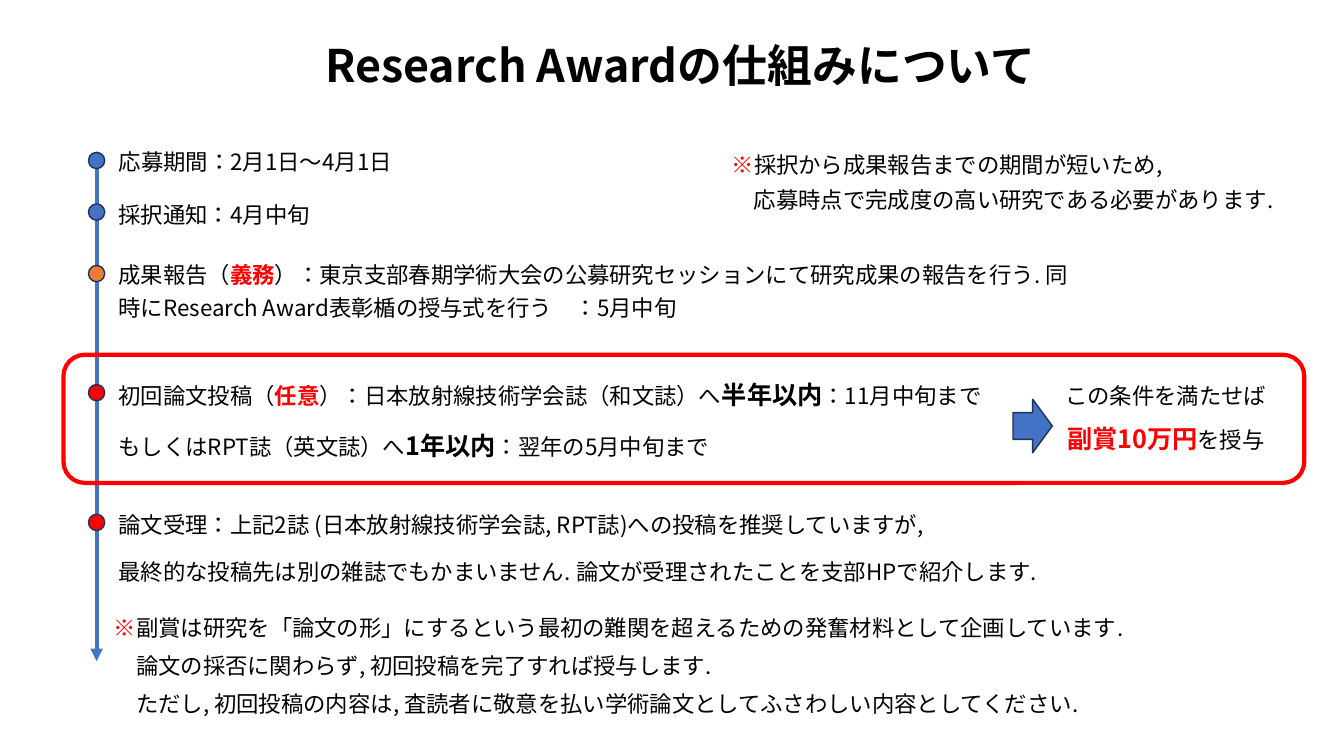
from lxml import etree
from pptx import Presentation
from pptx.dml.color import RGBColor
from pptx.enum.shapes import MSO_CONNECTOR, MSO_SHAPE
from pptx.enum.text import MSO_ANCHOR, MSO_AUTO_SIZE, PP_ALIGN
from pptx.oxml.ns import qn
from pptx.util import Cm, Pt

LEFT, CENTER = PP_ALIGN.LEFT, PP_ALIGN.CENTER
MIDDLE = MSO_ANCHOR.MIDDLE
SHRINK, FIXED = MSO_AUTO_SIZE.TEXT_TO_FIT_SHAPE, MSO_AUTO_SIZE.NONE
STRAIGHT = MSO_CONNECTOR.STRAIGHT
OVAL, ARROW, ROUNDED = MSO_SHAPE.OVAL, MSO_SHAPE.RIGHT_ARROW, MSO_SHAPE.ROUNDED_RECTANGLE

FONT = "Noto Sans CJK JP"
COLORS = {"text": "000000", "blue": "4472C4", "edge": "1E3256",
          "orange": "ED7D31", "red": "FF0000"}
DOT = 0.41
HANG = 0.56
STAGE_SPACING = 1.23


def rgb(name):
    return RGBColor.from_string(COLORS[name])


def place(shape, box):
    shape.left, shape.top, shape.width, shape.height = map(Cm, box)


def write(holder, box, paragraphs, spacing, size=16, align=LEFT, bold=False,
          hang=False, fit=FIXED):
    place(holder, box)
    frame = holder.text_frame
    frame.word_wrap = True
    frame.auto_size = fit
    frame.vertical_anchor = MIDDLE
    for index, pieces in enumerate(paragraphs):
        paragraph = frame.add_paragraph() if index else frame.paragraphs[0]
        paragraph.alignment = align
        paragraph.line_spacing = spacing
        paragraph.space_before = Pt(10 if index else 0)
        properties = paragraph._p.get_or_add_pPr()
        if hang:
            properties.set("marL", str(Cm(HANG)))
            properties.set("indent", str(0 if index else -Cm(HANG)))
        paragraph.font.name = FONT
        paragraph.font.size = Pt(size)
        paragraph.font.bold = bold
        paragraph.font.color.rgb = rgb("text")
        for words, style in pieces:
            run = paragraph.add_run()
            run.text = words
            run_properties = run._r.get_or_add_rPr()
            run_properties.set("lang", "ja-JP")
            etree.SubElement(run_properties, qn("a:ea")).set("typeface", FONT)
            if "bold" in style:
                run.font.bold = True
            if "red" in style:
                run.font.color.rgb = rgb("red")
            if "large" in style:
                run.font.size = Pt(18)


def add_text(slide, box, paragraphs, spacing, **options):
    write(slide.shapes.add_textbox(0, 0, 0, 0), box, paragraphs, spacing, **options)


def add_figure(slide, kind, box, fill, edge, width):
    figure = slide.shapes.add_shape(kind, *map(Cm, box))
    figure.shadow.inherit = False
    if fill:
        figure.fill.solid()
        figure.fill.fore_color.rgb = rgb(fill)
    else:
        figure.fill.background()
    figure.line.color.rgb = rgb(edge)
    figure.line.width = Pt(width)


def add_timeline(slide, box, milestones):
    left, top, width, height = box
    axis_x = left + width / 2
    axis = slide.shapes.add_connector(
        STRAIGHT, Cm(axis_x), Cm(top), Cm(axis_x), Cm(top + height))
    axis.line.color.rgb = rgb("blue")
    axis.line.width = Pt(3)
    etree.SubElement(axis.line._get_or_add_ln(), qn("a:tailEnd")).set("type", "triangle")
    etree.SubElement(axis._element.spPr, qn("a:effectLst"))
    for offset, color in milestones:
        add_figure(slide, OVAL, (left, top + offset, DOT, DOT), color, "edge", 1)


def add_stages(slide, box, period):
    left, top, width, _ = box
    write(period, (left, top, 8.15, 1.14),
          [[("応募期間：2月1日〜4月1日", "")]], 0.77)
    add_text(slide, (left, top + 1.32, 8.15, 1.14),
             [[("採択通知：4月中旬", "")]], 0.9)
    add_text(slide, (left, top + 2.69, 24.46, 2.03), [[
        ("成果報告（", ""), ("義務", "red bold"),
        ("）：東京支部春期学術大会の公募研究セッションにて研究成果の報告を行う. "
         "同時にResearch Award表彰楯の授与式を行う　：5月中旬", "")]], STAGE_SPACING)
    add_text(slide, (left, top + 5.92, 22.63, 2.03), [
        [("初回論文投稿（", ""), ("任意", "red bold"),
         ("）：日本放射線技術学会誌（和文誌）へ", ""),
         ("半年以内", "large bold"), ("：11月中旬まで", "")],
        [("もしくはRPT誌（英文誌）へ", ""), ("1年以内", "large bold"),
         ("：翌年の5月中旬まで", "")]], STAGE_SPACING)
    add_text(slide, (left, top + 9.17, width, 2.03), [
        [("論文受理：上記2誌 (日本放射線技術学会誌, RPT誌)への投稿を推奨していますが,", "")],
        [("最終的な投稿先は別の雑誌でもかまいません. "
          "論文が受理されたことを支部HPで紹介します.", "")]], STAGE_SPACING)


def add_prize(slide, box):
    left, top, _, _ = box
    add_figure(slide, ARROW, (left + 23.93, top + 1.12, 0.99, 1.35), "blue", "edge", 1)
    add_text(slide, (left + 24.44, top + 0.58, 6.68, 2.03), [
        [("この条件を満たせば", "")],
        [("副賞10万円", "large red bold"), ("を授与", "")]], 1.0, align=CENTER)
    add_figure(slide, ROUNDED, box, None, "red", 3)


def add_note(slide, box, lines, spacing):
    first, *others = lines
    paragraphs = [[("※", "red"), (first, "")]] + [[(line, "")] for line in others]
    add_text(slide, box, paragraphs, spacing, hang=True, fit=SHRINK)


def main():
    deck = Presentation()
    deck.slide_width, deck.slide_height = Cm(33.87), Cm(19.05)
    slide = deck.slides.add_slide(deck.slide_layouts[0])
    title, period = slide.placeholders
    write(title, (0.43, 0.56, 33.43, 2.29),
          [[("Research Awardの仕組みについて", "")]], 0.9, size=32, align=CENTER, bold=True)
    add_timeline(slide, (2.23, 3.84, DOT, 12.82), [
        (0, "blue"), (1.3, "blue"), (2.85, "orange"), (5.85, "red"), (9.12, "red")])
    add_stages(slide, (2.74, 3.56, 25.81, 11.2), period)
    add_prize(slide, (1.6, 8.94, 31.27, 3.23))
    add_note(slide, (18.19, 3.78, 14.5, 1.75), [
        "採択から成果報告までの期間が短いため,",
        "応募時点で完成度の高い研究である必要があります."], 0.8)
    add_note(slide, (2.62, 15.39, 30.25, 2.84), [
        "副賞は研究を「論文の形」にするという最初の難関を超えるための発奮材料として企画しています.",
        "論文の採否に関わらず, 初回投稿を完了すれば授与します.",
        "ただし, 初回投稿の内容は, 査読者に敬意を払い学術論文としてふさわしい内容としてください."], 0.9)
    deck.save("out.pptx")


if __name__ == "__main__":
    main()
